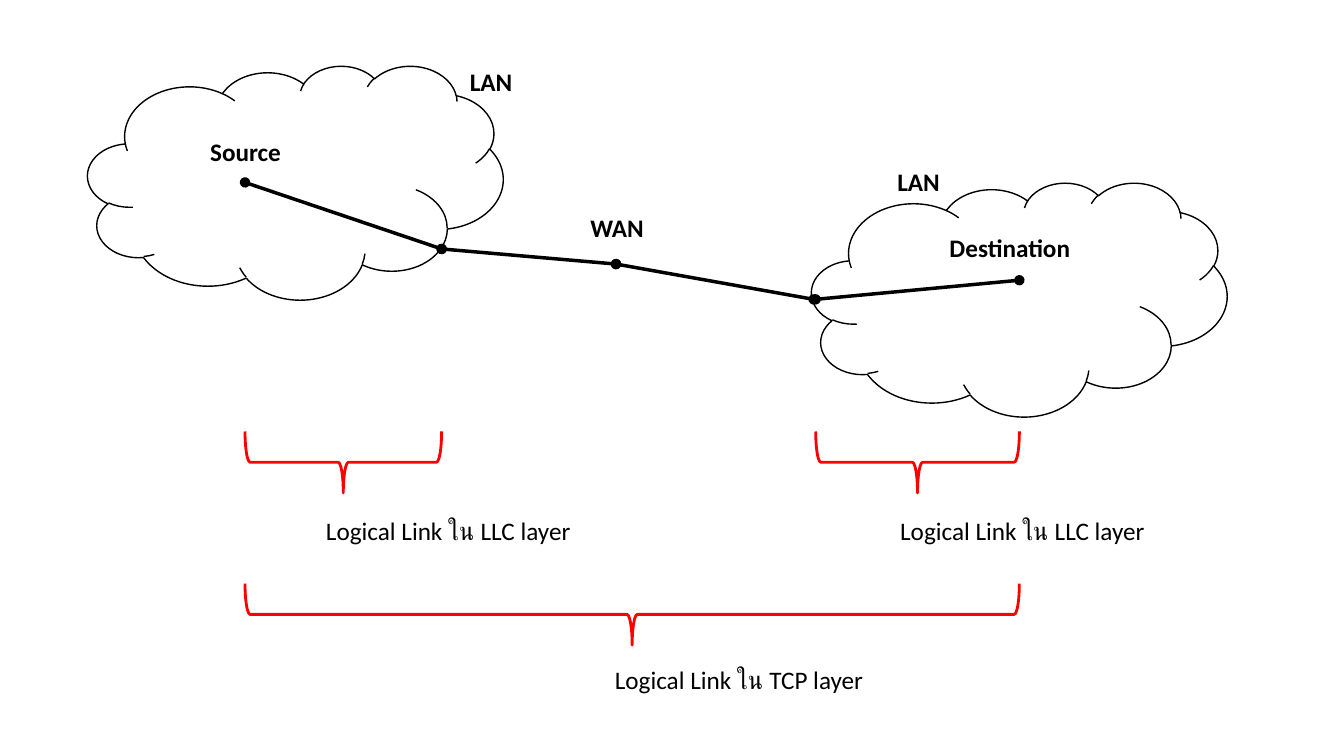
from dataclasses import dataclass
from lxml.etree import SubElement
from pptx import Presentation
from pptx.dml.color import RGBColor
from pptx.enum.shapes import MSO_CONNECTOR, MSO_SHAPE
from pptx.enum.text import MSO_AUTO_SIZE, PP_ALIGN
from pptx.oxml.ns import qn
from pptx.util import Inches, Pt

CLOUDS = [(0.87, 0.65), (8.05, 1.81)]
SOURCE = (2.43, 1.81)
SOURCE_GATEWAY = (4.38, 2.47)
WAN_NODE = (6.11, 2.62)
WAN_EXIT = (8.07, 2.97)
DESTINATION_GATEWAY = (8.09, 2.97)
DESTINATION = (10.11, 2.78)
LINKS = [
    (SOURCE, SOURCE_GATEWAY),
    (DESTINATION_GATEWAY, DESTINATION),
    (SOURCE_GATEWAY, WAN_NODE),
    (WAN_NODE, WAN_EXIT),
]
NAMES = [
    ("Source", 1.74, 1.3, 1.39),
    ("Destination", 9.19, 2.26, 1.65),
    ("LAN", 4.38, 0.61, 0.98),
    ("LAN", 8.62, 1.6, 0.98),
    ("WAN", 5.63, 2.06, 0.98),
]
SPANS = [
    ("Logical Link ใน LLC layer", SOURCE, SOURCE_GATEWAY, 4.28, 5.06),
    ("Logical Link ใน LLC layer", DESTINATION_GATEWAY, DESTINATION, 4.28, 5.06),
    ("Logical Link ใน TCP layer", SOURCE, DESTINATION, 5.79, 6.54),
]
CLOUD_WIDTH, CLOUD_HEIGHT = 4.12, 2.32
BRACE_DEPTH = 0.61
LABEL_WIDTH, LABEL_HEIGHT, LABEL_SHIFT = 3.1, 0.4, 0.27


@dataclass(frozen=True)
class Theme:
    font: str = "Calibri"
    size: float = 18
    ink: RGBColor = RGBColor(0, 0, 0)
    accent: RGBColor = RGBColor(255, 0, 0)
    cloud_line: float = 1
    link_line: float = 2.5
    brace_line: float = 2


THEME = Theme()


def add_outline(page, kind, left, top, width, height, color, weight):
    shape = page.shapes.add_shape(
        kind, Inches(left), Inches(top), Inches(width), Inches(height))
    shape.shadow.inherit = False
    shape.fill.background()
    shape.line.color.rgb = color
    shape.line.width = Pt(weight)
    return shape


def add_link(page, start, end):
    link = page.shapes.add_connector(
        MSO_CONNECTOR.STRAIGHT, *map(Inches, start + end))
    link.line.color.rgb = THEME.ink
    link.line.width = Pt(THEME.link_line)
    line = link.line._get_or_add_ln()
    for tag in ("a:headEnd", "a:tailEnd"):
        SubElement(line, qn(tag)).set("type", "oval")
    SubElement(link._element.spPr, qn("a:effectLst"))


def add_label(page, text, left, top, width, align, bold):
    box = page.shapes.add_textbox(
        Inches(left), Inches(top), Inches(width), Inches(LABEL_HEIGHT))
    frame = box.text_frame
    frame.word_wrap = True
    frame.auto_size = MSO_AUTO_SIZE.SHAPE_TO_FIT_TEXT
    frame.text = text
    para = frame.paragraphs[0]
    para.alignment = align
    font = para.runs[0].font
    font.name = THEME.font
    font.size = Pt(THEME.size)
    font.bold = bold
    font.color.rgb = THEME.ink


def add_span(page, text, start, end, top, label_top):
    width = end[0] - start[0]
    center = (start[0] + end[0]) / 2
    brace = add_outline(
        page, MSO_SHAPE.LEFT_BRACE, center - BRACE_DEPTH / 2,
        top + BRACE_DEPTH / 2 - width / 2, BRACE_DEPTH, width,
        THEME.accent, THEME.brace_line)
    brace.rotation = 270
    add_label(page, text, center - LABEL_SHIFT, label_top, LABEL_WIDTH,
              PP_ALIGN.LEFT, False)


def main():
    deck = Presentation()
    deck.slide_width, deck.slide_height = Inches(13.33), Inches(7.5)
    page = deck.slides.add_slide(deck.slide_layouts[6])
    for left, top in CLOUDS:
        add_outline(page, MSO_SHAPE.CLOUD, left, top, CLOUD_WIDTH,
                    CLOUD_HEIGHT, THEME.ink, THEME.cloud_line)
    for start, end in LINKS:
        add_link(page, start, end)
    for text, left, top, width in NAMES:
        add_label(page, text, left, top, width, PP_ALIGN.CENTER, True)
    for span in SPANS:
        add_span(page, *span)
    deck.save("out.pptx")


if __name__ == "__main__":
    main()
